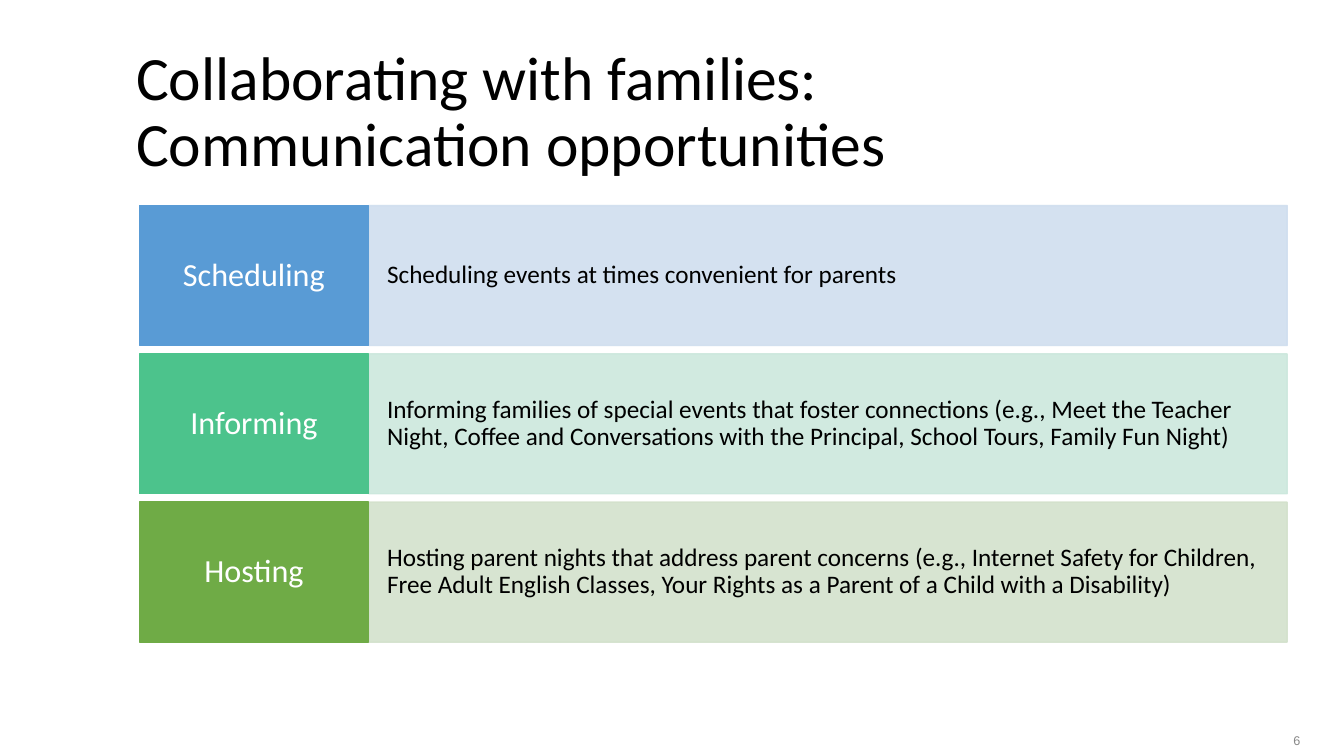
from lxml import etree
from pptx import Presentation
from pptx.dml.color import RGBColor
from pptx.enum import shapes, text
from pptx.oxml import ns
from pptx.util import Cm, Pt

BLACK = RGBColor(0x00, 0x00, 0x00)
WHITE = RGBColor(0xFF, 0xFF, 0xFF)
GREY = RGBColor(0x88, 0x88, 0x88)
BLUE = RGBColor(0x59, 0x9B, 0xD5)
SKY = RGBColor(0xCF, 0xDE, 0xEF)
TEAL = RGBColor(0x4C, 0xC3, 0x8C)
MINT = RGBColor(0xCC, 0xE8, 0xDD)
GREEN = RGBColor(0x6F, 0xAB, 0x46)
SAGE = RGBColor(0xD3, 0xE1, 0xCC)

ROWS = [
    ("Scheduling", "Scheduling events at times convenient for parents", BLUE, SKY),
    ("Informing",
     "Informing families of special events that foster connections (e.g., Meet the "
     "Teacher Night, Coffee and Conversations with the Principal, School Tours, "
     "Family Fun Night)", TEAL, MINT),
    ("Hosting",
     "Hosting parent nights that address parent concerns (e.g., Internet Safety for "
     "Children, Free Adult English Classes, Your Rights as a Parent of a Child with "
     "a Disability)", GREEN, SAGE),
]


def write(shape, words, size, color=BLACK, font="Calibri", align=text.PP_ALIGN.LEFT,
          anchor=text.MSO_ANCHOR.MIDDLE, pad=(0.25, 0.13), space=0.9):
    """Put formatted text into a shape."""
    frame = shape.text_frame
    frame.word_wrap = True
    frame.auto_size = text.MSO_AUTO_SIZE.NONE
    frame.vertical_anchor = anchor
    frame.margin_left = frame.margin_right = Cm(pad[0])
    frame.margin_top = frame.margin_bottom = Cm(pad[1])
    para = frame.paragraphs[0]
    para.text = words
    para.alignment = align
    para.line_spacing = space
    for run in para.runs:
        run.font.size = Pt(size)
        run.font.name = font
        run.font.color.rgb = color


def panel(slide, box, color, alpha=100):
    """Draw a flat rectangle with matching fill and line."""
    shape = slide.shapes.add_shape(
        shapes.MSO_SHAPE.RECTANGLE, *(Cm(n) for n in box))
    shape.shadow.inherit = False
    shape.fill.solid()
    shape.fill.fore_color.rgb = color
    shape.line.color.rgb = color
    shape.line.width = Pt(1)
    if alpha < 100:
        for tint in shape.element.spPr.iter(ns.qn("a:srgbClr")):
            etree.SubElement(tint, ns.qn("a:alpha"), val=str(alpha * 1000))
    return shape


def head(slide, box):
    """Place the slide title."""
    title = slide.shapes.title
    title.left, title.top, title.width, title.height = (Cm(n) for n in box)
    write(title, "Collaborating with families: \vCommunication opportunities", 44)


def row(slide, box, label, words, dark, pale):
    """Draw a label block with its description beside it."""
    left, top, width, height = box
    side = width / 5
    body = panel(slide, (left + side, top, width - side, height), pale, alpha=89)
    write(body, words, 18, pad=(0.46, 0.89))
    tag = panel(slide, (left, top, side, height), dark)
    write(tag, label, 23, color=WHITE, align=text.PP_ALIGN.CENTER, pad=(0.3, 0.36))


def table(slide, box, gap=0.21):
    """Stack the rows evenly in the box."""
    left, top, width, height = box
    step = (height + gap) / len(ROWS)
    for i, item in enumerate(ROWS):
        row(slide, (left, top + i * step, width, step - gap), *item)


def foot(slide, box):
    """Place the page number."""
    note = slide.shapes.add_textbox(*(Cm(n) for n in box))
    write(note, "6", 9, color=GREY, font="Arial", align=text.PP_ALIGN.RIGHT,
          anchor=text.MSO_ANCHOR.BOTTOM, space=1.0)


def main():
    """Build and save the slide."""
    deck = Presentation()
    deck.slide_width, deck.slide_height = Cm(33.87), Cm(19.05)
    slide = deck.slides.add_slide(deck.slide_layouts[5])
    head(slide, (3.18, 1.02, 28.35, 3.68))
    table(slide, (3.51, 5.18, 28.93, 11.0))
    foot(slide, (29.77, 18.08, 3.25, 0.89))
    deck.save("out.pptx")


if __name__ == "__main__":
    main()
